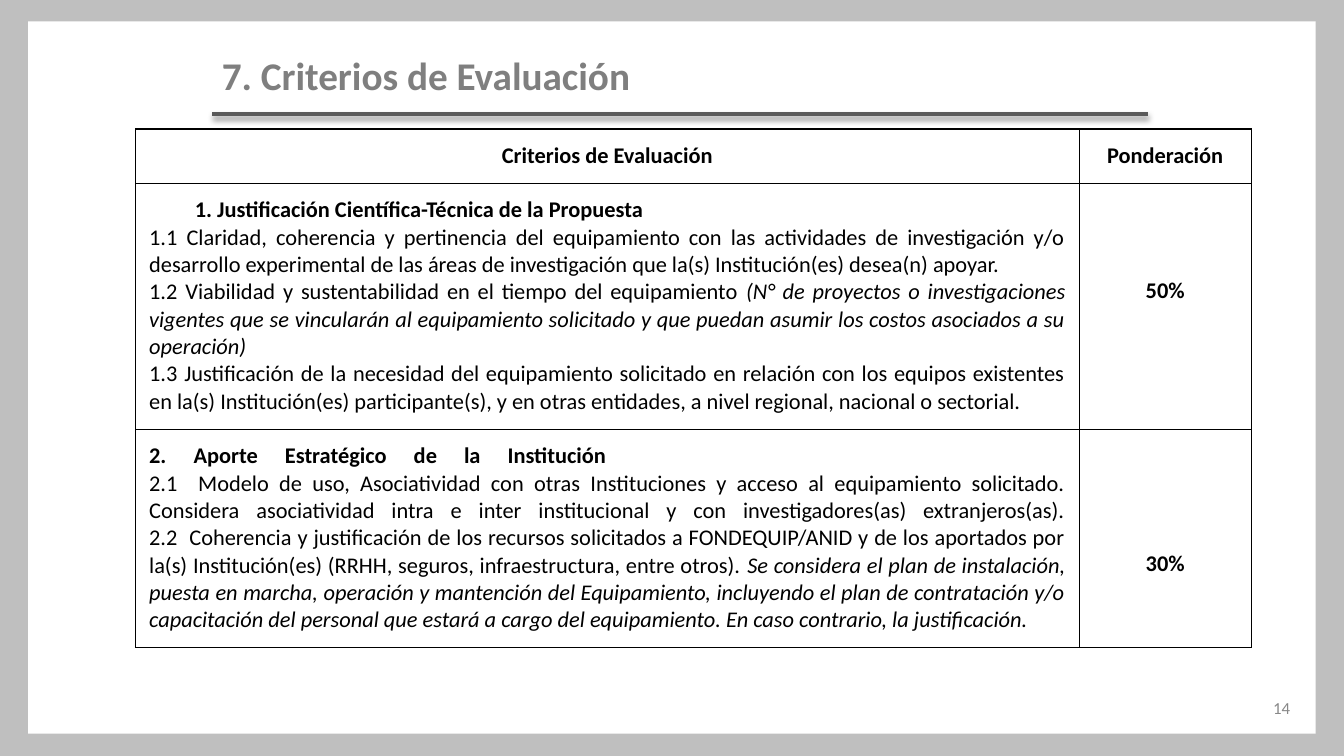
from lxml.etree import SubElement
from pptx import Presentation
from pptx.dml.color import RGBColor
from pptx.enum.shapes import MSO_CONNECTOR, MSO_SHAPE
from pptx.enum.text import MSO_ANCHOR, MSO_AUTO_SIZE, PP_ALIGN
from pptx.oxml import parse_xml
from pptx.oxml.ns import nsdecls, qn
from pptx.util import Inches, Pt

FONT = "Calibri"
SLIDE_WIDTH = 10
SLIDE_HEIGHT = SLIDE_WIDTH * 9 / 16
LINE_HEIGHT = 0.2  # one 12 pt line, in inches
COLUMN_WIDTHS = (7.02, 1.28)
ROW_HEIGHTS = (0.4, 1.83, 1.62)
TAB_STOPS = (3, 4, 5, 6)
BOLD, PLAIN, ITALIC = (True, False), (False, False), (False, True)

# Each paragraph is (alignment, indent, runs); each run is (text, style)
JUSTIFICATION = [
    (PP_ALIGN.LEFT, 0.34, [("1. Justificación Científica-Técnica de la Propuesta", BOLD)]),
    (PP_ALIGN.JUSTIFY, 0, [
        ("1.1 Claridad, coherencia y pertinencia del equipamiento con las actividades de "
         "investigación y/o desarrollo experimental de las áreas de investigación que la(s) "
         "Institución(es) desea(n) apoyar. ", PLAIN)]),
    (PP_ALIGN.JUSTIFY, 0, [
        ("1.2 Viabilidad y sustentabilidad en el tiempo del equipamiento ", PLAIN),
        ("(N° de proyectos o investigaciones vigentes que se vincularán al equipamiento "
         "solicitado y que puedan asumir los costos asociados a su operación)", ITALIC)]),
    (PP_ALIGN.JUSTIFY, 0, [
        ("1.3 Justificación de la necesidad del equipamiento solicitado en relación con los "
         "equipos existentes en la(s) Institución(es) participante(s), y en otras entidades, "
         "a nivel regional, nacional o sectorial.", PLAIN)]),
]
CONTRIBUTION = [
    (PP_ALIGN.JUSTIFY, 0, [
        ("2. Aporte Estratégico de la Institución\t\t\t\t\n", BOLD),
        ("2.1  Modelo de uso, Asociatividad con otras Instituciones y acceso al equipamiento "
         "solicitado. Considera asociatividad intra e inter institucional y con "
         "investigadores(as) extranjeros(as).\n"
         "2.2  Coherencia y justificación de los recursos solicitados a FONDEQUIP/ANID y de los "
         "aportados por la(s) Institución(es) (RRHH, seguros, infraestructura, entre otros). ",
         PLAIN),
        ("Se considera el plan de instalación, puesta en marcha, operación y mantención del "
         "Equipamiento, incluyendo el plan de contratación y/o capacitación del personal que "
         "estará a cargo del equipamiento. En caso contrario, la justificación.", ITALIC)]),
]


def centered(text):
    return [(PP_ALIGN.CENTER, 0, [(text, BOLD)])]


# Each cell is (paragraphs, lines of space above the text)
ROWS = [
    [(centered("Criterios de Evaluación"), 0), (centered("Ponderación"), 0)],
    [(JUSTIFICATION, 0), (centered("50%"), 3)],
    [(CONTRIBUTION, 0), (centered("30%"), 4)],
]


def color(value):
    return RGBColor.from_string(value)


def add_run(paragraph, text, size, hex_color, style=PLAIN):
    """Add text in one style, turning each newline into a line break."""
    for index, piece in enumerate(text.split("\n")):
        if index:
            paragraph.add_line_break()
        if piece:
            run = paragraph.add_run()
            run.text = piece
            run.font.name = FONT
            run.font.size = Pt(size)
            run.font.bold, run.font.italic = style
            run.font.color.rgb = color(hex_color)


def add_rectangle(slide, left, top, width, height, fill):
    shape = slide.shapes.add_shape(
        MSO_SHAPE.RECTANGLE, Inches(left), Inches(top), Inches(width), Inches(height))
    shape.shadow.inherit = False
    shape.fill.solid()
    shape.fill.fore_color.rgb = color(fill)
    shape.line.fill.background()


def set_text(shape, box, text, size, hex_color, alignment, style=PLAIN):
    """Place a title or text box and write its single line."""
    shape.left, shape.top, shape.width, shape.height = map(Inches, box)
    frame = shape.text_frame
    frame.word_wrap = True
    frame.auto_size = MSO_AUTO_SIZE.NONE
    frame.vertical_anchor = MSO_ANCHOR.MIDDLE
    frame.margin_left = frame.margin_right = Inches(0.07)
    frame.margin_top = frame.margin_bottom = Inches(0.04)
    paragraph = frame.paragraphs[0]
    paragraph.alignment = alignment
    add_run(paragraph, text, size, hex_color, style)


def add_title_rule(slide):
    connector = slide.shapes.add_connector(
        MSO_CONNECTOR.STRAIGHT, Inches(1.58), Inches(0.85), Inches(8.54), Inches(0.85))
    connector.line.color.rgb = color("595959")
    connector.line.width = Pt(2.25)
    connector._element.spPr.append(parse_xml(
        f'<a:effectLst {nsdecls("a")}><a:outerShdw blurRad="{Pt(3.1)}" dist="{Pt(1.6)}" '
        'dir="5400000" rotWithShape="0"><a:srgbClr val="000000"><a:alpha val="38000"/>'
        '</a:srgbClr></a:outerShdw></a:effectLst>'))


def set_borders(cell):
    properties = cell._tc.get_or_add_tcPr()
    for position, side in enumerate(("lnL", "lnR", "lnT", "lnB")):
        line = parse_xml(f'<a:{side} {nsdecls("a")} w="{Pt(0.75)}"/>')
        fill = SubElement(line, qn("a:solidFill"))
        SubElement(fill, qn("a:srgbClr")).set("val", "000000")
        properties.insert(position, line)


def set_tab_stops(paragraph):
    tab_list = SubElement(paragraph._p.get_or_add_pPr(), qn("a:tabLst"))
    for stop in TAB_STOPS:
        tab = SubElement(tab_list, qn("a:tab"))
        tab.set("pos", str(Inches(stop)))
        tab.set("algn", "l")


def fill_cell(cell, paragraphs, lines_above):
    cell.fill.background()
    set_borders(cell)
    cell.margin_left = cell.margin_right = cell.margin_bottom = Inches(0.1)
    cell.margin_top = Inches(0.1 + lines_above * LINE_HEIGHT)
    frame = cell.text_frame
    for index, (alignment, indent, runs) in enumerate(paragraphs):
        paragraph = frame.add_paragraph() if index else frame.paragraphs[0]
        paragraph.alignment = alignment
        if indent:
            paragraph._p.get_or_add_pPr().set("marL", str(Inches(indent)))
        if any("\t" in text for text, style in runs):
            set_tab_stops(paragraph)
        for text, style in runs:
            add_run(paragraph, text, 12, "000000", style)


def add_criteria_table(slide):
    table = slide.shapes.add_table(
        len(ROWS), len(COLUMN_WIDTHS), Inches(1.01), Inches(0.96),
        Inches(sum(COLUMN_WIDTHS)), Inches(sum(ROW_HEIGHTS))).table
    table.first_row = table.horz_banding = False
    for column, width in zip(table.columns, COLUMN_WIDTHS):
        column.width = Inches(width)
    for row, height, contents in zip(table.rows, ROW_HEIGHTS, ROWS):
        row.height = Inches(height)
        for cell, (paragraphs, lines_above) in zip(row.cells, contents):
            fill_cell(cell, paragraphs, lines_above)


def main():
    presentation = Presentation()
    presentation.slide_width = Inches(SLIDE_WIDTH)
    presentation.slide_height = Inches(SLIDE_HEIGHT)
    slide = presentation.slides.add_slide(presentation.slide_layouts[5])

    # Grey frame around a white page
    add_rectangle(slide, 0, 0, SLIDE_WIDTH, SLIDE_HEIGHT, "BFBFBF")
    add_rectangle(slide, 0.21, 0.16, 9.58, 5.3, "FFFFFF")

    # Title, brought in front of the page, and its rule
    title = slide.shapes.title
    slide.shapes._spTree.append(title._element)
    set_text(title, (1.58, 0.34, 6.96, 0.44), "7. Criterios de Evaluación",
             21, "7F7F7F", PP_ALIGN.LEFT, BOLD)
    add_title_rule(slide)

    # Page number
    number = slide.shapes.add_textbox(0, 0, 0, 0)
    set_text(number, (7.98, 5.12, 1.69, 0.3), "14", 9, "888888", PP_ALIGN.RIGHT)

    # Criteria and weights
    add_criteria_table(slide)
    presentation.save("out.pptx")


if __name__ == "__main__":
    main()
